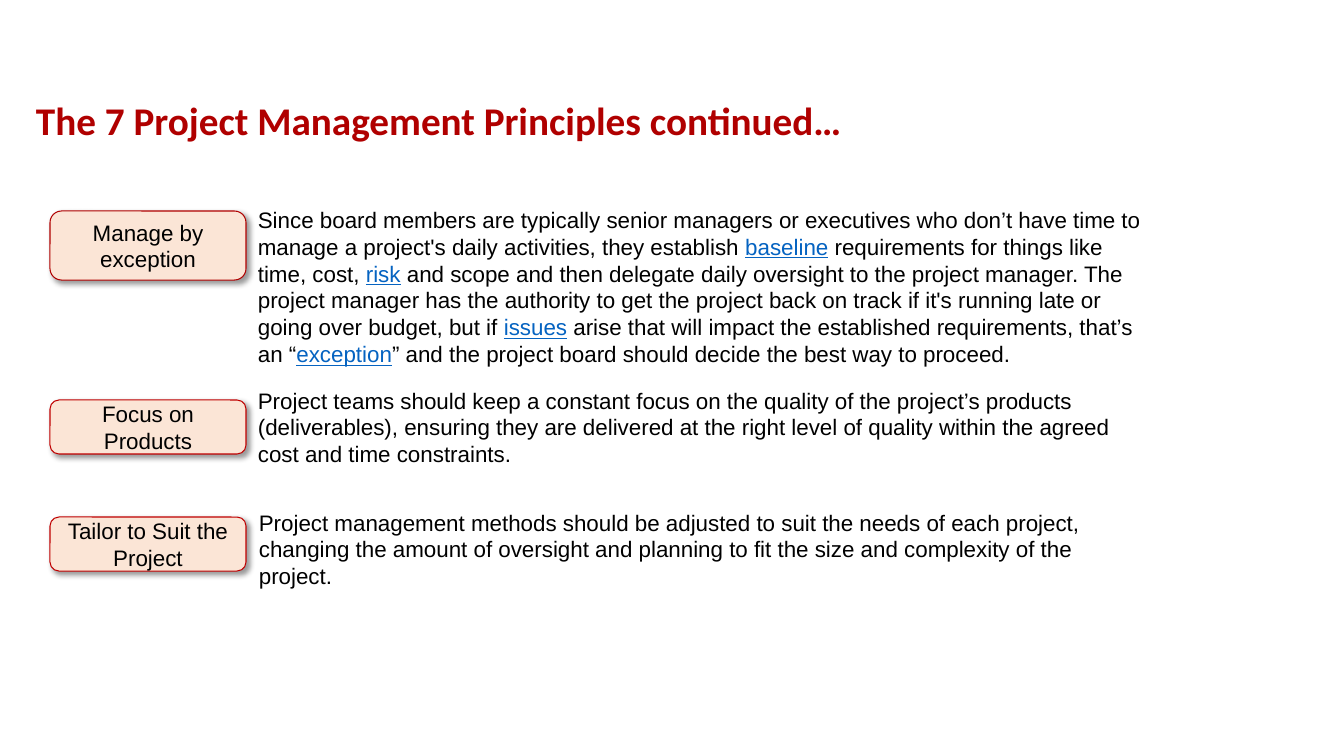
"""Build the slide on the last three of the seven project management principles."""
from lxml import etree
from pptx import Presentation
from pptx.dml.color import RGBColor
from pptx.enum.shapes import MSO_SHAPE
from pptx.enum.text import MSO_ANCHOR as Anchor, PP_ALIGN as Align
from pptx.oxml import parse_xml
from pptx.oxml.ns import nsdecls, qn
from pptx.util import Pt

PX = 914400 / 100.8
COLORS = {"red": "B00000", "bright_red": "C00000", "peach": "FBE5D6",
          "black": "000000", "link": "0563C1"}
LABEL_LEFT, LABEL_WIDTH, BODY_WIDTH = 50, 196, 906
SHADOW = (
    f'<a:effectLst {nsdecls("a")}>'
    f'<a:outerShdw blurRad="{Pt(4)}" dist="{Pt(3)}" dir="2700000" algn="tl" rotWithShape="0">'
    f'<a:srgbClr val="{COLORS["black"]}"><a:alpha val="40000"/></a:srgbClr>'
    '</a:outerShdw></a:effectLst>'
)


def px(*lengths):
    return [round(length * PX) for length in lengths]


def write(shape, text, size=16, font="Arial", color="black", bold=False,
          align=Align.LEFT, anchor=Anchor.MIDDLE):
    """Write text into a shape; words between bars are underlined in the link colour."""
    frame = shape.text_frame
    frame.word_wrap = True
    frame.vertical_anchor = anchor
    paragraph = frame.paragraphs[0]
    paragraph.alignment = align
    for index, part in enumerate(text.split("|")):
        linked = index % 2 == 1
        run = paragraph.add_run()
        run.text = part
        run.font.name = font
        run.font.size = Pt(size)
        run.font.bold = bold
        run.font.underline = linked
        run.font.color.rgb = RGBColor.from_string(COLORS["link" if linked else color])


presentation = Presentation()
presentation.slide_width, presentation.slide_height = px(1344, 756)
slide = presentation.slides.add_slide(presentation.slide_layouts[6])

title = slide.shapes.add_textbox(*px(26, 74, 1129, 74))
write(title, "The 7 Project Management Principles continued…", size=28,
      font="Calibri", color="red", bold=True, anchor=Anchor.BOTTOM)

principles = [
    ("Manage by exception", 211, 69, "red", (248, 221, 131),
     "Since board members are typically senior managers or executives who don’t have "
     "time to manage a project's daily activities, they establish |baseline| requirements "
     "for things like time, cost, |risk| and scope and then delegate daily oversight to "
     "the project manager. The project manager has the authority to get the project back "
     "on track if it's running late or going over budget, but if |issues| arise that will "
     "impact the established requirements, that’s an “|exception|” and the project board "
     "should decide the best way to proceed."),
    ("Focus on Products", 400, 54, "bright_red", (248, 391, 72),
     "Project teams should keep a constant focus on the quality of the project’s products "
     "(deliverables), ensuring they are delivered at the right level of quality within the "
     "agreed cost and time constraints."),
    ("Tailor to Suit the Project", 517, 54, "bright_red", (249, 517, 64),
     "Project management methods should be adjusted to suit the needs of each project, "
     "changing the amount of oversight and planning to fit the size and complexity of the "
     "project."),
]

for name, top, height, outline, (body_left, body_top, body_height), description in principles:
    label = slide.shapes.add_shape(MSO_SHAPE.ROUNDED_RECTANGLE,
                                   *px(LABEL_LEFT, top, LABEL_WIDTH, height))
    label.fill.solid()
    label.fill.fore_color.rgb = RGBColor.from_string(COLORS["peach"])
    label.line.color.rgb = RGBColor.from_string(COLORS[outline])
    label.line.width = Pt(0.75)
    label.shadow.inherit = False
    properties = label.element.spPr
    properties.replace(properties.find(qn("a:effectLst")), parse_xml(SHADOW))
    write(label, name, align=Align.CENTER)

    body = slide.shapes.add_textbox(*px(body_left, body_top, BODY_WIDTH, body_height))
    write(body, description)

presentation.save("out.pptx")
